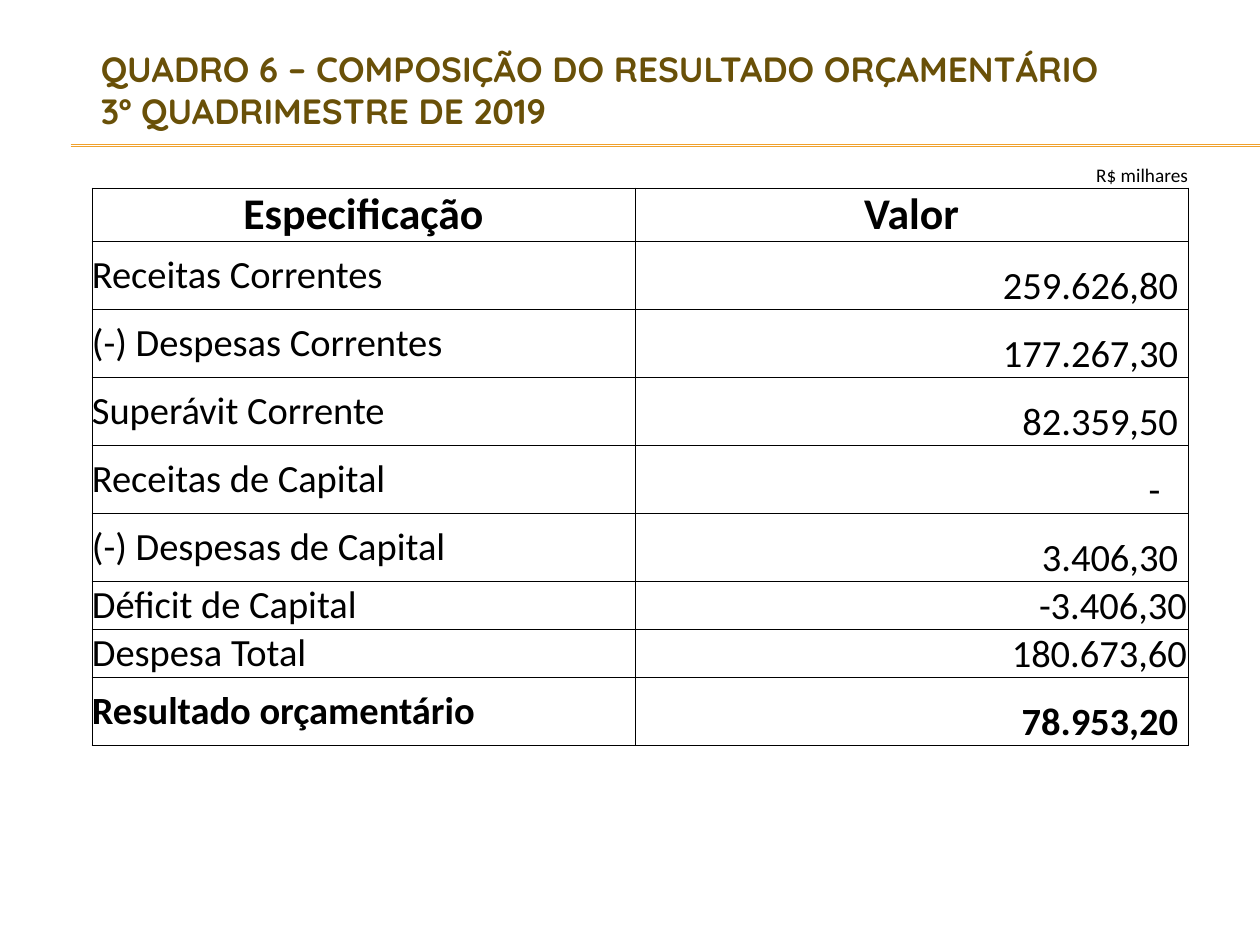
from lxml.etree import SubElement
from pptx import Presentation
from pptx.dml.color import RGBColor
from pptx.enum.shapes import MSO_CONNECTOR
from pptx.enum.text import MSO_ANCHOR, PP_ALIGN
from pptx.oxml import parse_xml
from pptx.oxml.ns import nsdecls, qn
from pptx.util import Inches, Pt


def write(tf, text, font="Calibri", size=22, color="000000", bold=False,
          align=PP_ALIGN.LEFT):
    p = tf.paragraphs[0]
    p.text = text
    p.alignment = align
    for r in p.runs:
        r.font.name, r.font.size, r.font.bold = font, Pt(size), bold
        r.font.color.rgb = RGBColor.from_string(color)


def set_borders(cell, visible):
    """Draw the sides named in visible (from L, R, T, B) and hide the others."""
    for side in "LRTB":
        fill = ('<a:solidFill><a:srgbClr val="000000"/></a:solidFill>'
                if side in visible else "<a:noFill/>")
        cell._tc.get_or_add_tcPr().append(parse_xml(
            f'<a:ln{side} {nsdecls("a")} w="{Pt(0.5)}">{fill}</a:ln{side}>'))


prs = Presentation()
W, H = prs.slide_width, prs.slide_height = Inches(10), Inches(7.5)
s = prs.slides.add_slide(prs.slide_layouts[5])

# Double rule under the title
for y in (0.153, 0.155):
    line = s.shapes.add_connector(MSO_CONNECTOR.STRAIGHT, int(W * 0.056), int(H * y),
                                  W, int(H * y))
    line.line.color.rgb = RGBColor.from_string("F0A22E")
    line.line.width = Pt(0.75)
    SubElement(line._element.spPr, qn("a:effectLst"))

title = s.shapes.title
title.left, title.top = int(W * 0.07), int(H * 0.073)
title.width, title.height = int(W * 0.85), int(H * 0.044)
title.text_frame.word_wrap = True
title.text_frame.vertical_anchor = MSO_ANCHOR.MIDDLE
write(title.text_frame,
      "QUADRO 6 – COMPOSIÇÃO DO RESULTADO ORÇAMENTÁRIO\v3º QUADRIMESTRE DE 2019",
      font="Quicksand", size=20, color="695008", bold=True)

# Label, value, row height as a share of H, right indent of the value in inches
TALL, SHORT = 0.072, 0.045
rows = [
    ("Receitas Correntes", "259.626,80", TALL, 0.08),
    ("(-) Despesas Correntes", "177.267,30", TALL, 0.08),
    ("Superávit Corrente", "82.359,50", TALL, 0.08),
    ("Receitas de Capital", "-", TALL, 0.22),
    ("(-) Despesas de Capital", "3.406,30", TALL, 0.08),
    ("Déficit de Capital", "-3.406,30", SHORT, 0.01),
    ("Despesa Total", "180.673,60", SHORT, 0.01),
    ("Resultado orçamentário", "78.953,20", TALL, 0.08),
]
col_shares = [0.431, 0.21, 0.229]
row_shares = [0.043, 0.055] + [row[2] for row in rows]

table = s.shapes.add_table(len(row_shares), len(col_shares), int(W * 0.073),
                           int(H * 0.156), int(W * sum(col_shares)),
                           int(H * sum(row_shares))).table
table.first_row = table.horz_banding = False
for col, share in zip(table.columns, col_shares):
    col.width = int(W * share)
for row, share in zip(table.rows, row_shares):
    row.height = int(H * share)

for i, row in enumerate(table.rows):
    for cell in row.cells:
        set_borders(cell, "LRTB" if i else "B")
        cell.fill.background()
        cell.margin_left = cell.margin_right = cell.margin_top = cell.margin_bottom = 0
        cell.vertical_anchor = MSO_ANCHOR.BOTTOM
    if i:
        table.cell(i, 1).merge(table.cell(i, 2))

write(table.cell(0, 2).text_frame, "R$ milhares", size=11, align=PP_ALIGN.RIGHT)
for j, heading in enumerate(("Especificação", "Valor")):
    write(table.cell(1, j).text_frame, heading, size=25, bold=True,
          align=PP_ALIGN.CENTER)

for i, (label, value, _, indent) in enumerate(rows, start=2):
    bold = label == rows[-1][0]
    name, amount = table.cell(i, 0), table.cell(i, 1)
    name.vertical_anchor = MSO_ANCHOR.MIDDLE
    write(name.text_frame, label, bold=bold)
    amount.margin_left = amount.margin_top = Inches(0.01)
    amount.margin_right = Inches(indent)
    write(amount.text_frame, value, bold=bold, align=PP_ALIGN.RIGHT)

prs.save("out.pptx")
